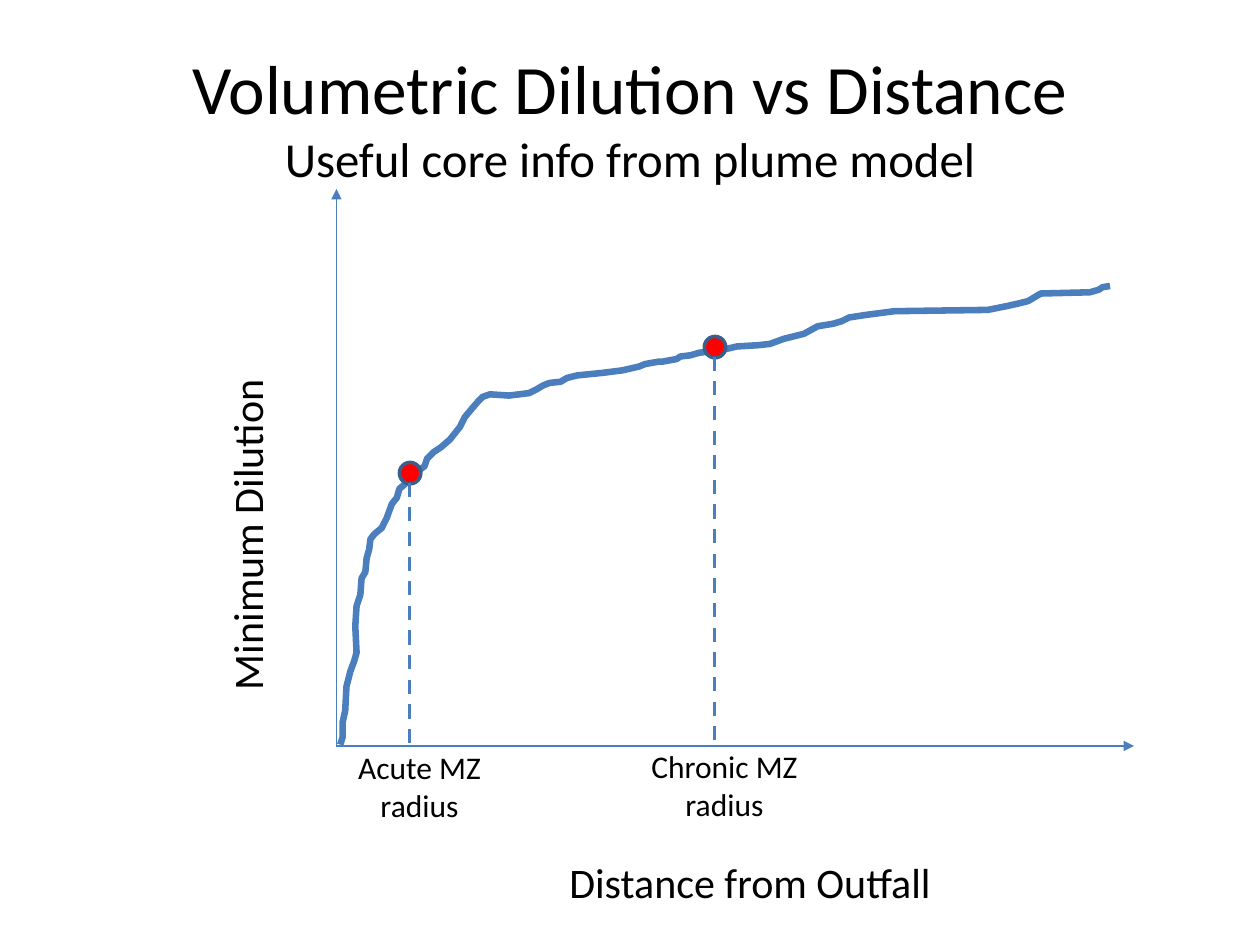
import pptx
import pptx.util
import pptx.dml.color
import pptx.enum.dml
import pptx.enum.shapes
import pptx.enum.text
import pptx.oxml.ns
import lxml.etree

Inches = pptx.util.Inches
Pt = pptx.util.Pt
RGBColor = pptx.dml.color.RGBColor
PP_ALIGN = pptx.enum.text.PP_ALIGN

BLUE = RGBColor(0x4B, 0x7E, 0xBC)
DARK_BLUE = RGBColor(0x3A, 0x5F, 0x8C)
RED = RGBColor(0xFF, 0x00, 0x00)
BLACK = RGBColor(0x00, 0x00, 0x00)

CURVE_HUNDREDTHS = [
    (270, 591), (272, 585), (272, 573), (274, 564), (275, 545), (278, 533),
    (281, 525), (283, 518), (282, 497), (283, 481), (286, 472), (287, 459),
    (290, 454), (291, 443), (293, 436), (294, 428), (297, 424), (303, 419),
    (307, 411), (311, 400), (315, 395), (317, 388), (324, 382), (328, 376),
    (333, 373), (337, 370), (339, 364), (344, 359), (350, 355), (357, 349),
    (365, 339), (369, 331), (374, 325), (380, 318), (383, 315), (389, 313),
    (404, 314), (420, 312), (426, 309), (431, 306), (436, 304), (445, 303),
    (450, 300), (458, 298), (478, 296), (494, 294), (507, 291), (512, 289),
    (523, 287), (526, 287), (537, 285), (540, 283), (548, 282), (555, 280),
    (572, 278), (585, 275), (602, 274), (611, 273), (622, 269), (638, 265),
    (649, 259), (661, 257), (668, 255), (674, 252), (687, 250), (710, 247),
    (784, 246), (799, 243), (808, 241), (816, 239), (821, 236), (826, 233),
    (865, 232), (872, 230), (875, 228), (881, 227),
]

deck = pptx.Presentation()
deck.slide_width = Inches(10)
deck.slide_height = Inches(7.5)
slide = deck.slides.add_slide(deck.slide_layouts[6])
shapes = slide.shapes


def add_label(lines, left, top, width, height, size, align=PP_ALIGN.LEFT):
    label = shapes.add_textbox(Inches(left), Inches(top), Inches(width), Inches(height))
    frame = label.text_frame
    frame.word_wrap = True
    frame.text = "\n".join(lines)
    for paragraph in frame.paragraphs:
        paragraph.alignment = align
        paragraph.font.name = "Calibri"
        paragraph.font.size = Pt(size)
        paragraph.font.color.rgb = BLACK
    return label


def add_line(x1, y1, x2, y2, width):
    line = shapes.add_connector(
        pptx.enum.shapes.MSO_CONNECTOR.STRAIGHT,
        Inches(x1), Inches(y1), Inches(x2), Inches(y2))
    line.line.color.rgb = BLUE
    line.line.width = Pt(width)
    lxml.etree.SubElement(line._element.spPr, pptx.oxml.ns.qn("a:effectLst"))
    return line


outline = shapes.build_freeform(*CURVE_HUNDREDTHS[0], scale=Inches(0.01))
outline.add_line_segments(CURVE_HUNDREDTHS[1:], close=False)
curve = outline.convert_to_shape()
curve.shadow.inherit = False
curve.fill.background()
curve.line.color.rgb = BLUE
curve.line.width = Pt(3.75)

title = add_label(["Volumetric Dilution vs Distance"], 0.5, 0.3, 9, 1.25, 39.6, PP_ALIGN.CENTER)
title.text_frame.vertical_anchor = pptx.enum.text.MSO_ANCHOR.MIDDLE
heading = title.text_frame.paragraphs[0]
heading.add_line_break()
subtitle = heading.add_run()
subtitle.text = "Useful core info from plume model"
subtitle.font.size = Pt(27.9)

for x, y in [(2.67, 1.5), (9, 5.92)]:
    axis = add_line(2.67, 5.92, x, y, 0.75)
    arrowhead = lxml.etree.SubElement(axis.line._get_or_add_ln(), pptx.oxml.ns.qn("a:tailEnd"))
    arrowhead.set("type", "triangle")

dilution_label = add_label(["Minimum Dilution"], 0.29, 3.66, 3.33, 0.5, 24)
dilution_label.rotation = 270
add_label(["Distance from Outfall"], 4.42, 6.75, 3.5, 0.5, 24)

for zone, x, y, label_left, label_top in [
    ("Acute MZ", 3.25, 3.75, 2.33, 5.89),
    ("Chronic MZ", 5.67, 2.75, 4.75, 5.88),
]:
    marker = shapes.add_shape(
        pptx.enum.shapes.MSO_SHAPE.OVAL,
        Inches(x - 0.08), Inches(y - 0.08), Inches(0.17), Inches(0.17))
    marker.shadow.inherit = False
    marker.fill.solid()
    marker.fill.fore_color.rgb = RED
    marker.line.color.rgb = DARK_BLUE
    marker.line.width = Pt(2)
    radius = add_line(x, y + 0.08, x, 5.92, 2)
    radius.line.dash_style = pptx.enum.dml.MSO_LINE.DASH
    add_label([zone, "radius"], label_left, label_top, 2, 0.71, 18, PP_ALIGN.CENTER)

deck.save("out.pptx")
